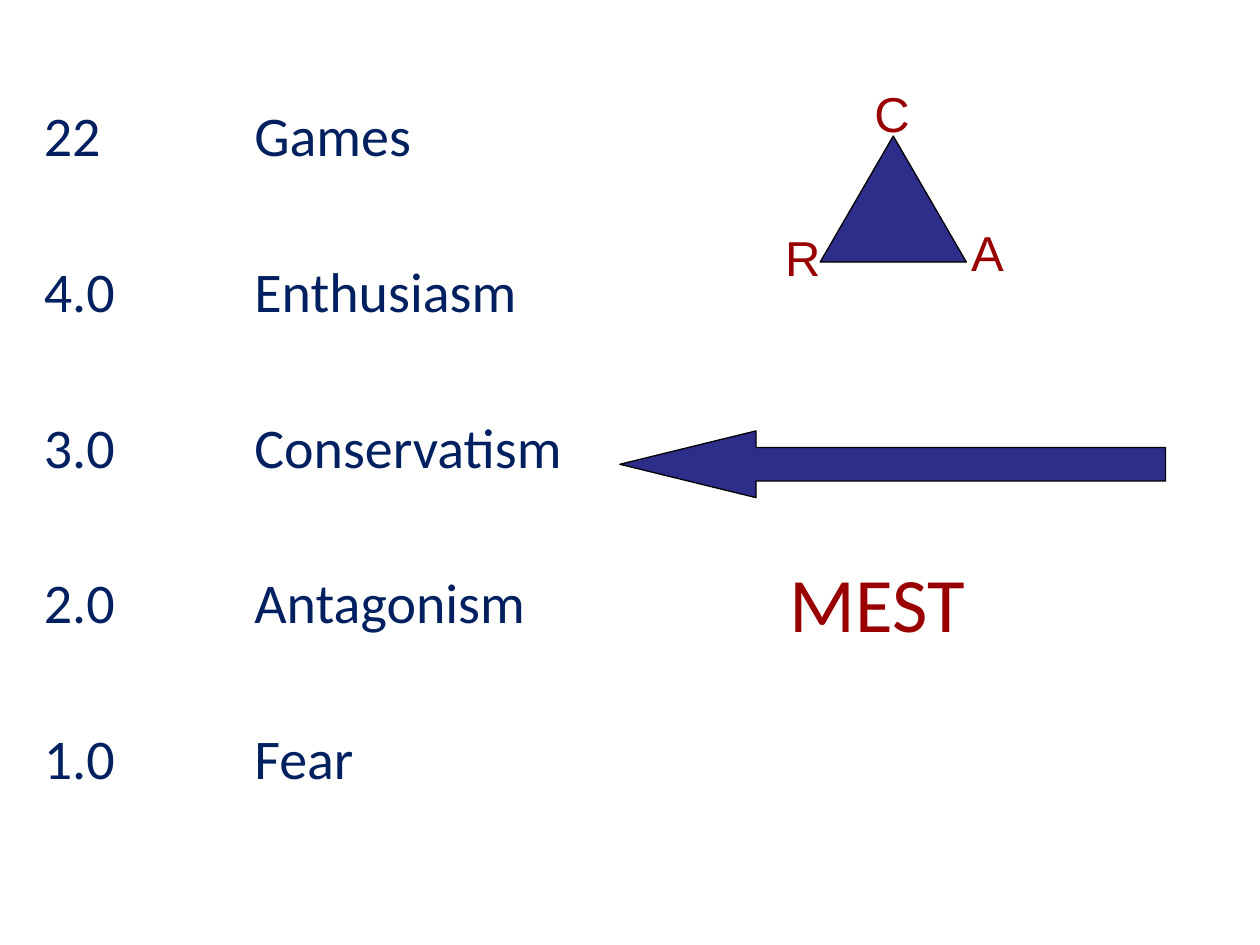
from lxml import etree
from pptx import Presentation
from pptx.dml.color import RGBColor
from pptx.enum import shapes as sh, text as tx
from pptx.oxml.ns import qn
from pptx.util import Inches, Pt

NAVY = RGBColor(0x00, 0x20, 0x60)
INDIGO = RGBColor(0x2D, 0x2D, 0x8A)
RED = RGBColor(0x99, 0x00, 0x00)
BLACK = RGBColor(0, 0, 0)

TONES = [("22", "Games"), ("4.0", "Enthusiasm"), ("3.0", "Conservatism"),
         ("2.0", "Antagonism"), ("1.0", "Fear")]


def style(para, font, size, color):
    for run in para.runs:
        run.font.name = font
        run.font.size = Pt(size)
        run.font.color.rgb = color


def add_scale(slide, left, top, width, height):
    """List the tone levels, with their names lined up on a tab stop."""
    box = slide.shapes.add_textbox(Inches(left), Inches(top), Inches(width), Inches(height))
    frame = box.text_frame
    frame.word_wrap = True
    frame.text = "\n".join(f"{level}\t{name}" for level, name in TONES)
    for para in frame.paragraphs:
        style(para, "Calibri", 32, NAVY)
        para.space_after = Pt(50.6)
        tabs = etree.SubElement(para._p.get_or_add_pPr(), qn("a:tabLst"))
        etree.SubElement(tabs, qn("a:tab"), pos=str(Inches(1.67)), algn="l")


def add_solid(slide, kind, left, top, width, height):
    solid = slide.shapes.add_shape(kind, Inches(left), Inches(top), Inches(width), Inches(height))
    solid.shadow.inherit = False
    solid.fill.solid()
    solid.fill.fore_color.rgb = INDIGO
    solid.line.color.rgb = BLACK
    solid.line.width = Pt(0.75)
    return solid


def add_label(slide, label, left, top, width, height, font="Arial", size=28,
              align=tx.PP_ALIGN.LEFT):
    box = slide.shapes.add_textbox(Inches(left), Inches(top), Inches(width), Inches(height))
    frame = box.text_frame
    frame.word_wrap = False
    frame.auto_size = tx.MSO_AUTO_SIZE.SHAPE_TO_FIT_TEXT
    frame.text = label
    para = frame.paragraphs[0]
    para.alignment = align
    style(para, font, size, RED)


def add_triangle(slide, left, top, width, height):
    """Draw the triangle with a letter at each corner."""
    add_solid(slide, sh.MSO_SHAPE.ISOSCELES_TRIANGLE, left, top, width, height)
    add_label(slide, "A", left + 1.1, top + 0.64, 0.46, 0.57)
    add_label(slide, "R", left - 0.38, top + 0.68, 0.48, 0.57, align=tx.PP_ALIGN.RIGHT)
    add_label(slide, "C", left + 0.33, top - 0.47, 0.48, 0.57)


def add_arrow(slide, left, top, width, height):
    arrow = add_solid(slide, sh.MSO_SHAPE.LEFT_ARROW, left, top, width, height)
    arrow.adjustments[0] = 0.5
    arrow.adjustments[1] = 2.04


def main():
    deck = Presentation()
    deck.slide_width, deck.slide_height = Inches(10), Inches(7.5)
    slide = deck.slides.add_slide(deck.slide_layouts[6])
    add_scale(slide, 0.25, 0.75, 9.08, 6.33)
    add_triangle(slide, 6.51, 1.08, 1.16, 1)
    add_arrow(slide, 4.92, 3.42, 4.33, 0.53)
    add_label(slide, "MEST", 6.17, 4.36, 1.71, 0.84, font="Calibri", size=44)
    deck.save("out.pptx")


if __name__ == "__main__":
    main()
